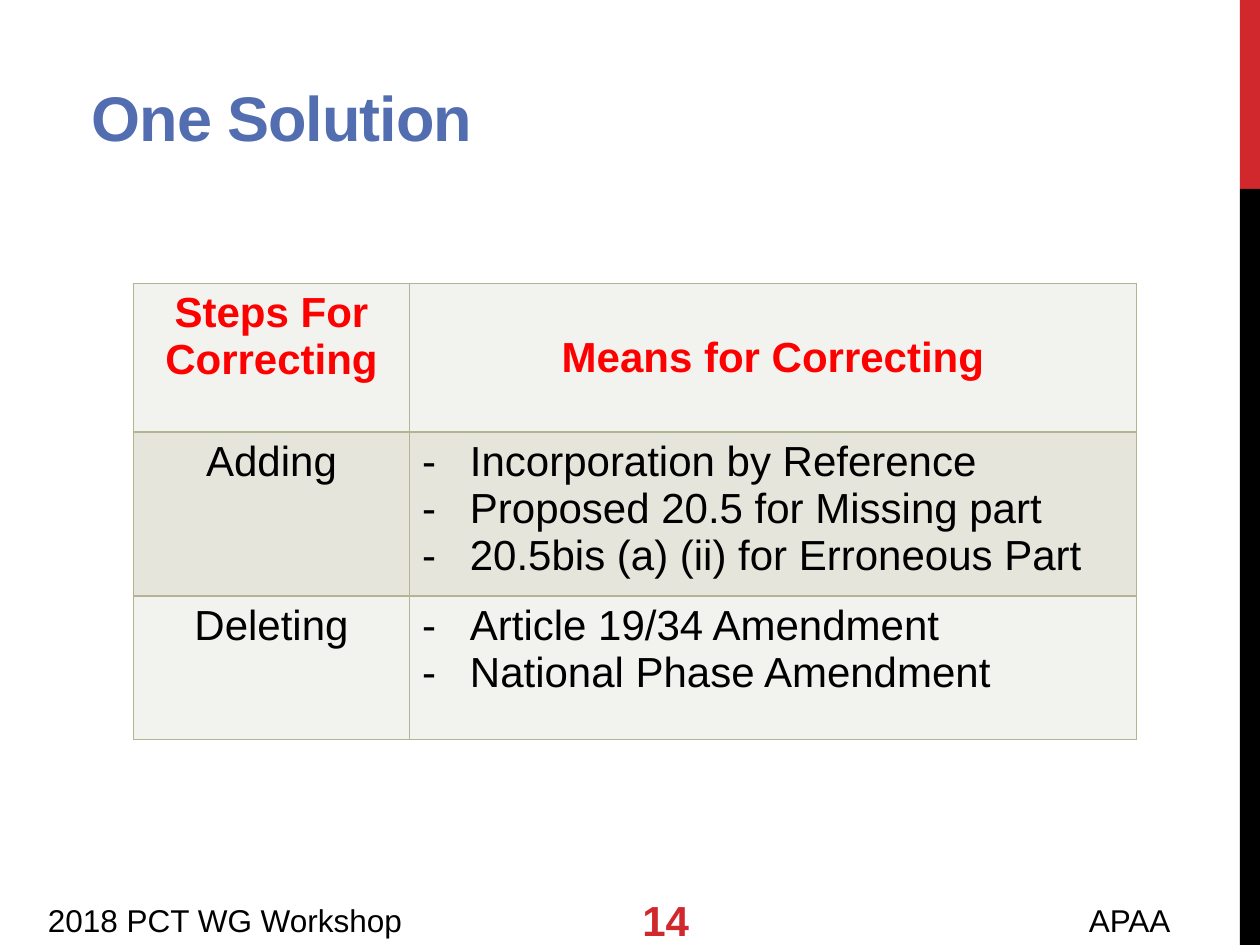
import pptx
import pptx.util
import pptx.oxml
import pptx.oxml.ns
from lxml import etree
from pptx.dml.color import RGBColor
from pptx.enum.shapes import MSO_SHAPE
from pptx.enum.text import MSO_ANCHOR, PP_ALIGN
from pptx.util import Inches

RED = RGBColor(0xD1, 0x28, 0x2E)
BLACK = RGBColor(0x00, 0x00, 0x00)
BLUE = RGBColor(0x52, 0x6D, 0xB0)
HEADING_RED = RGBColor(0xFF, 0x00, 0x00)
LIGHT = RGBColor(0xF2, 0xF2, 0xEE)
SHADED = RGBColor(0xE5, 0xE5, 0xDC)
BORDER = RGBColor(0xB4, 0xB3, 0x92)


def add_child(parent, tag, **attributes):
    return etree.SubElement(parent, pptx.oxml.ns.qn(tag), attributes)


def write_text(para, text, *, size=24, color=BLACK, bold=False,
               align=PP_ALIGN.LEFT, spacing=None, bullet=None, right_tab=None):
    para.alignment = align
    span = para.add_run()
    span.text = text
    span.font.name = "Arial"
    span.font.size = pptx.util.Pt(size)
    span.font.bold = bold
    span.font.color.rgb = color
    if spacing is not None:
        span.font._element.set("spc", str(round(spacing * 100)))
    properties = para._p.get_or_add_pPr()
    if bullet:
        indent = Inches(0.38)
        properties.set("marL", str(indent))
        properties.set("indent", str(-indent))
        add_child(properties, "a:buFont", typeface="Arial")
        add_child(properties, "a:buChar", char=bullet)
    if right_tab is not None:
        tabs = add_child(properties, "a:tabLst")
        add_child(tabs, "a:tab", pos=str(right_tab), algn="r")


class SlideBuilder:
    def __init__(self, page):
        self.page = page

    def bar(self, left, top, width, height, color):
        shape = self.page.shapes.add_shape(
            MSO_SHAPE.RECTANGLE, Inches(left), Inches(top), Inches(width), Inches(height))
        shape.shadow.inherit = False
        shape.fill.solid()
        shape.fill.fore_color.rgb = color
        shape.line.fill.background()

    def text(self, left, top, width, height, text,
             anchor=MSO_ANCHOR.TOP, inset=0.1, **style):
        box = self.page.shapes.add_textbox(
            Inches(left), Inches(top), Inches(width), Inches(height))
        frame = box.text_frame
        frame.word_wrap = True
        frame.vertical_anchor = anchor
        frame.margin_left = Inches(inset)
        write_text(frame.paragraphs[0], text, **style)

    def cell(self, cell, lines, fill, anchor=MSO_ANCHOR.TOP, **style):
        cell.vertical_anchor = anchor
        frame = cell.text_frame
        for number, line in enumerate(lines):
            para = frame.add_paragraph() if number else frame.paragraphs[0]
            write_text(para, line, **style)
        properties = cell._tc.get_or_add_tcPr()
        for side in ("a:lnL", "a:lnR", "a:lnT", "a:lnB"):
            line = add_child(properties, side, w=str(pptx.util.Pt(1)))
            paint = add_child(line, "a:solidFill")
            add_child(paint, "a:srgbClr", val=str(BORDER))
        cell.fill.solid()
        cell.fill.fore_color.rgb = fill

    def table(self, left, top, widths, heights, headings, rows):
        frame = self.page.shapes.add_table(
            len(heights), len(widths), Inches(left), Inches(top),
            Inches(sum(widths)), Inches(sum(heights)))
        table = frame.table
        table.first_row = table.horz_banding = False
        for column, width in zip(table.columns, widths):
            column.width = Inches(width)
        for row, height in zip(table.rows, heights):
            row.height = Inches(height)

        # Heading row
        anchors = (MSO_ANCHOR.TOP, MSO_ANCHOR.MIDDLE)
        for column, (heading, anchor) in enumerate(zip(headings, anchors)):
            self.cell(table.cell(0, column), [heading], LIGHT, anchor,
                      color=HEADING_RED, bold=True, align=PP_ALIGN.CENTER)

        # Step rows, alternately shaded
        for number, (step, means) in enumerate(rows, start=1):
            fill = SHADED if number % 2 else LIGHT
            self.cell(table.cell(number, 0), [step], fill, align=PP_ALIGN.CENTER)
            self.cell(table.cell(number, 1), means, fill, bullet="-")


def main():
    deck = pptx.Presentation()
    deck.slide_width, deck.slide_height = Inches(10), Inches(7.5)
    builder = SlideBuilder(deck.slides.add_slide(deck.slide_layouts[6]))

    # Side stripe
    builder.bar(9.84, 0, 0.16, 1.5, RED)
    builder.bar(9.84, 1.5, 0.16, 6, BLACK)

    # Slide number and title
    builder.text(5, 7.1, 1.44, 0.4, "14", MSO_ANCHOR.MIDDLE, color=RED, bold=True)
    builder.text(0.63, 0.52, 8.74, 0.75, "One Solution", MSO_ANCHOR.BOTTOM,
                 size=36, color=BLUE, bold=True, spacing=-0.6)

    # Correction steps
    builder.table(
        1.06, 2.25, (2.19, 5.77), (1.18, 1.21, 1.14),
        ("Steps For Correcting", "Means for Correcting"),
        (("Adding", ("Incorporation by Reference",
                     "Proposed 20.5 for Missing part",
                     "20.5bis (a) (ii) for Erroneous Part")),
         ("Deleting", ("Article 19/34 Amendment",
                       "National Phase Amendment"))))

    # Footer
    builder.text(0, 7.1, 9.88, 0.4, "2018 PCT WG Workshop\tAPAA",
                 inset=0.38, size=18, right_tab=Inches(8.91))

    deck.save("out.pptx")


if __name__ == "__main__":
    main()
